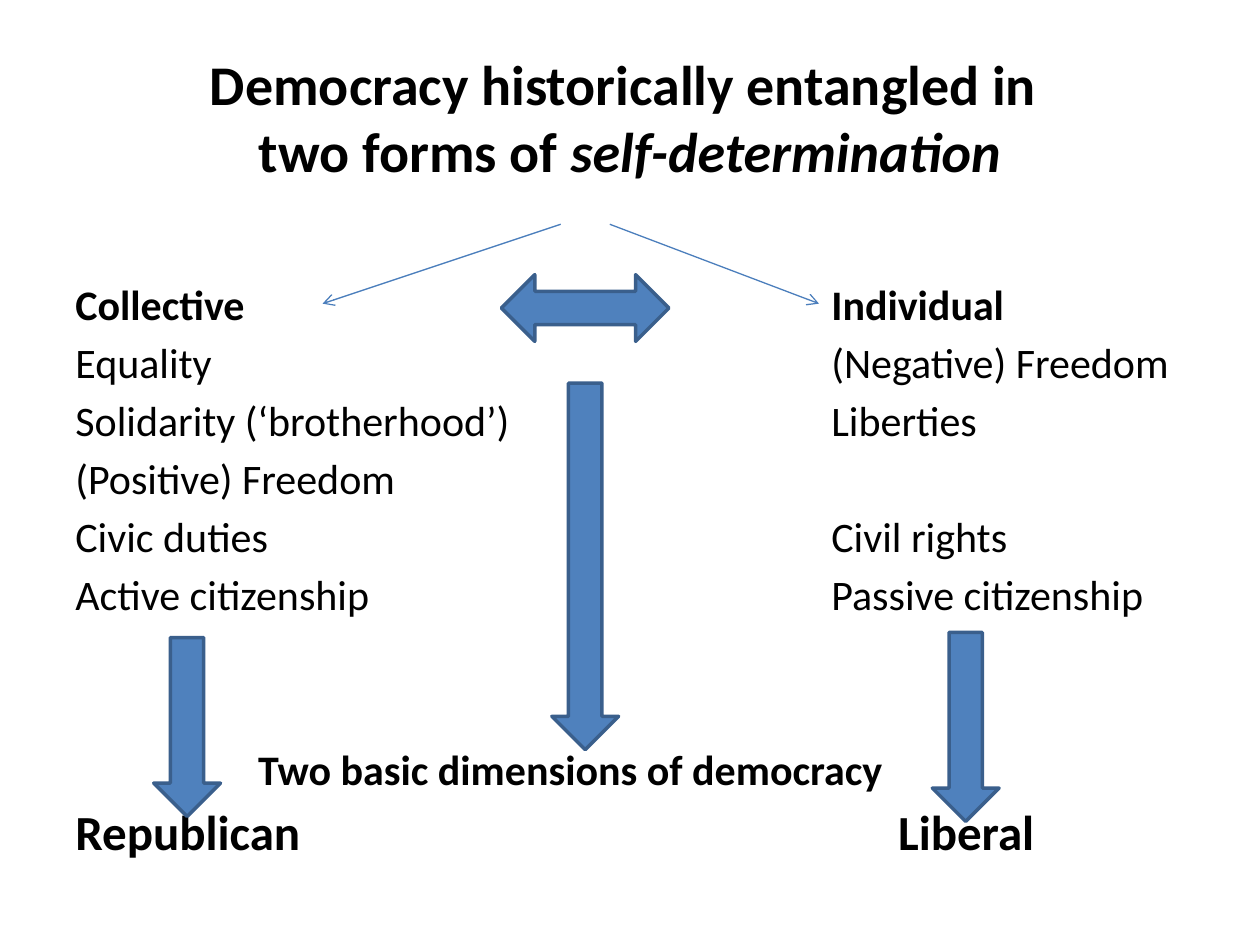
from dataclasses import dataclass

from lxml import etree
from pptx import Presentation
from pptx import util as u
from pptx.dml.color import RGBColor
from pptx.enum import shapes, text
from pptx.oxml.ns import qn


@dataclass(frozen=True)
class Theme:
    font: str = "Calibri"
    ink: RGBColor = RGBColor(0x00, 0x00, 0x00)
    block: RGBColor = RGBColor(0x4F, 0x81, 0xBD)
    outline: RGBColor = RGBColor(0x3A, 0x5F, 0x8C)
    pointer: RGBColor = RGBColor(0x4B, 0x7E, 0xBC)
    title: int = 32
    body: int = 24
    outcome: int = 28


THEME = Theme()
WIDTH, HEIGHT = 10, 7.5
MARGIN = 0.05 * WIDTH
CONTENT = WIDTH - 2 * MARGIN
ARROW = 0.53  # thickness of every block arrow

# Tab stops, from the left edge of the text
RIGHT_COLUMN, DIMENSIONS, LIBERAL = 6, 1.45, 6.53
ROW_GAP = 4.3

# Text, tab stop, size, bold, points before
ROWS = [
    ("Collective\tIndividual", RIGHT_COLUMN, THEME.body, True, 0),
    *((row, RIGHT_COLUMN, THEME.body, False, ROW_GAP) for row in (
        "Equality\t(Negative) Freedom",
        "Solidarity (‘brotherhood’)\tLiberties",
        "(Positive) Freedom",
        "Civic duties\tCivil rights",
        "Active citizenship\tPassive citizenship",
    )),
    ("\tTwo basic dimensions of democracy", DIMENSIONS, THEME.body, True, 71.3),
    ("Republican\tLiberal", LIBERAL, THEME.outcome, True, 4.6),
]


def inches(*lengths):
    return [u.Inches(length) for length in lengths]


def format_run(run, size, bold, italic=False):
    run.font.name = THEME.font
    run.font.size = u.Pt(size)
    run.font.bold = bold
    run.font.italic = italic
    run.font.color.rgb = THEME.ink


def set_heading(slide):
    heading = slide.shapes.title
    heading.left, heading.top, heading.width, heading.height = inches(
        MARGIN, 0.04 * HEIGHT, CONTENT, 1.25)
    frame = heading.text_frame
    frame.vertical_anchor = text.MSO_ANCHOR.MIDDLE
    frame.text = "Democracy historically entangled in \vtwo forms of "
    line = frame.paragraphs[0]
    line.alignment = text.PP_ALIGN.CENTER
    line.add_run().text = "self-determination"
    for run in line.runs:
        format_run(run, THEME.title, True, run.text == "self-determination")


def add_tab_stop(paragraph, position):
    properties = paragraph._p.get_or_add_pPr()
    stops = etree.SubElement(properties, qn("a:tabLst"))
    etree.SubElement(stops, qn("a:tab"), pos=str(u.Inches(position)), algn="l")


def add_comparison(slide):
    box = slide.shapes.add_textbox(*inches(MARGIN, 2.16, CONTENT, 4.54))
    frame = box.text_frame
    frame.word_wrap = True
    for index, (wording, stop, size, bold, gap) in enumerate(ROWS):
        row = frame.add_paragraph() if index else frame.paragraphs[0]
        row.text = wording
        row.space_before = u.Pt(gap)
        add_tab_stop(row, stop)
        for run in row.runs:
            format_run(run, size, bold)


def add_block_arrow(slide, kind, left, top, width, height):
    arrow = slide.shapes.add_shape(kind, *inches(left, top, width, height))
    arrow.shadow.inherit = False
    arrow.fill.solid()
    arrow.fill.fore_color.rgb = THEME.block
    arrow.line.color.rgb = THEME.outline
    arrow.line.width = u.Pt(2)


def add_pointer(slide, start, end):
    pointer = slide.shapes.add_connector(
        shapes.MSO_CONNECTOR.STRAIGHT, *inches(*start, *end))
    pointer.line.color.rgb = THEME.pointer
    pointer.line.width = u.Pt(0.75)
    etree.SubElement(pointer.line._get_or_add_ln(), qn("a:tailEnd"), type="arrow")
    etree.SubElement(pointer._element.spPr, qn("a:effectLst"))


def main():
    deck = Presentation()
    deck.slide_width, deck.slide_height = inches(WIDTH, HEIGHT)
    slide = deck.slides.add_slide(deck.slide_layouts[5])

    set_heading(slide)
    add_comparison(slide)

    # Each form leads down to its tradition, both to the two dimensions
    for left, top, length in ((1.22, 5.06, 1.42), (7.4, 5.02, 1.5), (4.38, 3.04, 2.91)):
        add_block_arrow(slide, shapes.MSO_SHAPE.DOWN_ARROW, left, top, ARROW, length)

    # Tension between the collective and the individual form
    add_block_arrow(slide, shapes.MSO_SHAPE.LEFT_RIGHT_ARROW, 3.98, 2.18, 1.33, ARROW)

    # The heading branches into the two forms
    for start, end in ((4.84, 6.5), (4.45, 2.56)):
        add_pointer(slide, (start, 1.78), (end, 2.41))

    deck.save("out.pptx")


if __name__ == "__main__":
    main()
